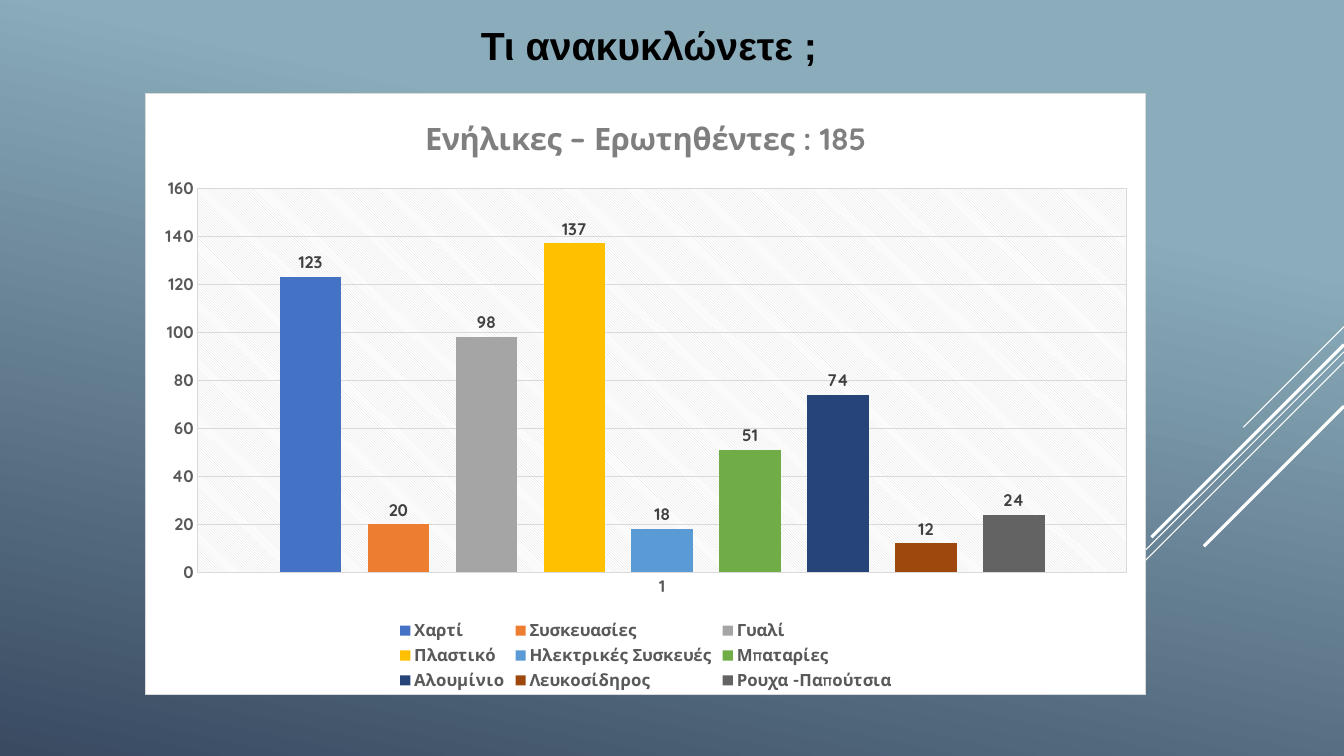
from pptx import Presentation
from pptx.chart.data import CategoryChartData
from pptx.dml.color import RGBColor
from pptx.enum.chart import XL_CHART_TYPE, XL_LABEL_POSITION, XL_LEGEND_POSITION, XL_TICK_MARK
from pptx.enum.text import MSO_ANCHOR, PP_ALIGN
from pptx.oxml import parse_xml
from pptx.oxml.ns import nsdecls, qn
from pptx.util import Inches, Pt
from lxml import etree

SKY = RGBColor(0x8A, 0xAC, 0xBB)
NAVY = RGBColor(0x39, 0x4A, 0x61)
WHITE = RGBColor(0xFF, 0xFF, 0xFF)
BLACK = RGBColor(0x00, 0x00, 0x00)
GRID_GRAY = RGBColor(0xD9, 0xD9, 0xD9)
TITLE_GRAY = RGBColor(0x7F, 0x7F, 0x7F)
AXIS_GRAY = RGBColor(0x59, 0x59, 0x59)
LABEL_GRAY = RGBColor(0x40, 0x40, 0x40)

CHART_FONT = "Quicksand"
MATERIALS = [
    ("Χαρτί", 123, RGBColor(0x44, 0x72, 0xC4)),
    ("Συσκευασίες", 20, RGBColor(0xED, 0x7D, 0x31)),
    ("Γυαλί", 98, RGBColor(0xA5, 0xA5, 0xA5)),
    ("Πλαστικό", 137, RGBColor(0xFF, 0xC0, 0x00)),
    ("Ηλεκτρικές Συσκευές", 18, RGBColor(0x5B, 0x9B, 0xD5)),
    ("Μπαταρίες", 51, RGBColor(0x70, 0xAD, 0x47)),
    ("Αλουμίνιο", 74, RGBColor(0x26, 0x44, 0x78)),
    ("Λευκοσίδηρος", 12, RGBColor(0x9E, 0x48, 0x0E)),
    ("Ρουχα -Παπούτσια", 24, RGBColor(0x63, 0x63, 0x63)),
]
# Diagonals at 45 degrees: start below the box top, horizontal run, width in points
DIAGONALS = [(0, 1, 0.75), (0.25, 3.26, 0.75), (0.35, 2.07, 0.75),
             (0.18, 1.91, 2.25), (0.79, 1.39, 2.25)]


def style_font(font, size, color, name=CHART_FONT):
    font.size = Pt(size)
    font.bold = True
    font.name = name
    font.color.rgb = color


def style_line(line, color, width=0.75):
    line.color.rgb = color
    line.width = Pt(width)


def add_background(slide):
    fill = slide.background.fill
    fill.gradient()
    fill.gradient_angle = 258
    for stop, color, position in zip(fill.gradient_stops, (SKY, NAVY), (0.26, 1)):
        stop.color.rgb = color
        stop.position = position


def add_diagonals(slide, right, top):
    for drop, run, width in DIAGONALS:
        start = top + drop
        connector = slide.shapes.add_connector(
            1, Inches(right), Inches(start), Inches(right - run), Inches(start + run))
        style_line(connector.line, WHITE, width)
        etree.SubElement(connector._element.spPr, qn("a:effectLst"))


def add_title(slide, left, top, width, height):
    title = slide.shapes.title
    title.left, title.top = Inches(left), Inches(top)
    title.width, title.height = Inches(width), Inches(height)
    frame = title.text_frame
    frame.word_wrap = False
    frame.vertical_anchor = MSO_ANCHOR.MIDDLE
    paragraph = frame.paragraphs[0]
    paragraph.alignment = PP_ALIGN.CENTER
    run = paragraph.add_run()
    run.text = "Τι ανακυκλώνετε ;"
    style_font(run.font, 28, BLACK, "Arial")


def area_properties(fill):
    return parse_xml(
        f'<c:spPr {nsdecls("c", "a")}>{fill}<a:ln w="9525"><a:solidFill>'
        f'<a:srgbClr val="{GRID_GRAY}"/></a:solidFill></a:ln></c:spPr>')


def style_areas(chart):
    # White chart area with a thin border, hatched plot area
    chart_space = chart._chartSpace
    chart_space.chart.addnext(area_properties(
        f'<a:solidFill><a:srgbClr val="{WHITE}"/></a:solidFill>'))
    plot_area = chart_space.chart.plotArea
    plot_area.append(area_properties(
        f'<a:pattFill prst="ltDnDiag"><a:fgClr><a:srgbClr val="{GRID_GRAY}"/></a:fgClr>'
        f'<a:bgClr><a:srgbClr val="{WHITE}"/></a:bgClr></a:pattFill>'))
    # Inner plot position as shares of the chart
    for layout in plot_area.findall(qn("c:layout")):
        plot_area.remove(layout)
    shares = "".join(f'<c:{key} val="{share}"/>' for key, share in
                     (("x", 0.052), ("y", 0.158), ("w", 0.929), ("h", 0.638)))
    plot_area.insert(0, parse_xml(
        f'<c:layout {nsdecls("c")}><c:manualLayout><c:layoutTarget val="inner"/>'
        f'<c:xMode val="edge"/><c:yMode val="edge"/>{shares}</c:manualLayout></c:layout>'))


def style_axes(chart):
    for axis in (chart.category_axis, chart.value_axis):
        axis.major_tick_mark = axis.minor_tick_mark = XL_TICK_MARK.NONE
        axis.has_major_gridlines = True
        style_line(axis.major_gridlines.format.line, GRID_GRAY)
        style_font(axis.tick_labels.font, 12, AXIS_GRAY)
    style_line(chart.category_axis.format.line, GRID_GRAY)
    chart.value_axis.format.line.fill.background()
    chart.value_axis.minimum_scale = 0
    chart.value_axis.maximum_scale = 160
    chart.value_axis.major_unit = 20


def add_chart(slide, left, top, width, height):
    data = CategoryChartData()
    data.categories = ["1"]
    for name, answers, _ in MATERIALS:
        data.add_series(name, [answers])
    chart = slide.shapes.add_chart(
        XL_CHART_TYPE.COLUMN_CLUSTERED, Inches(left), Inches(top),
        Inches(width), Inches(height), data).chart
    style_font(chart.font, 10, AXIS_GRAY)

    # Chart title and legend
    chart.has_title = True
    run = chart.chart_title.text_frame.paragraphs[0].add_run()
    run.text = "Ενήλικες – Ερωτηθέντες : 185"
    style_font(run.font, 22, TITLE_GRAY)
    chart.has_legend = True
    chart.legend.position = XL_LEGEND_POSITION.BOTTOM
    chart.legend.include_in_layout = False
    style_font(chart.legend.font, 12, AXIS_GRAY)

    # Columns and value labels
    plot = chart.plots[0]
    plot.gap_width = 267
    plot.overlap = -43
    plot.vary_by_categories = False
    for series, (_, _, color) in zip(plot.series, MATERIALS):
        series.format.fill.solid()
        series.format.fill.fore_color.rgb = color
        labels = series.data_labels
        labels.show_value = True
        labels.position = XL_LABEL_POSITION.OUTSIDE_END
        style_font(labels.font, 12, LABEL_GRAY)

    style_axes(chart)
    style_areas(chart)


def main():
    presentation = Presentation()
    presentation.slide_width = Inches(13.33)
    presentation.slide_height = Inches(7.5)
    slide = presentation.slides.add_slide(presentation.slide_layouts[5])
    add_background(slide)
    add_diagonals(slide, 13.33, 3.24)
    add_chart(slide, 1.44, 0.92, 9.93, 5.98)
    add_title(slide, 4.65, 0.16, 3.57, 0.57)
    presentation.save("out.pptx")


if __name__ == "__main__":
    main()
